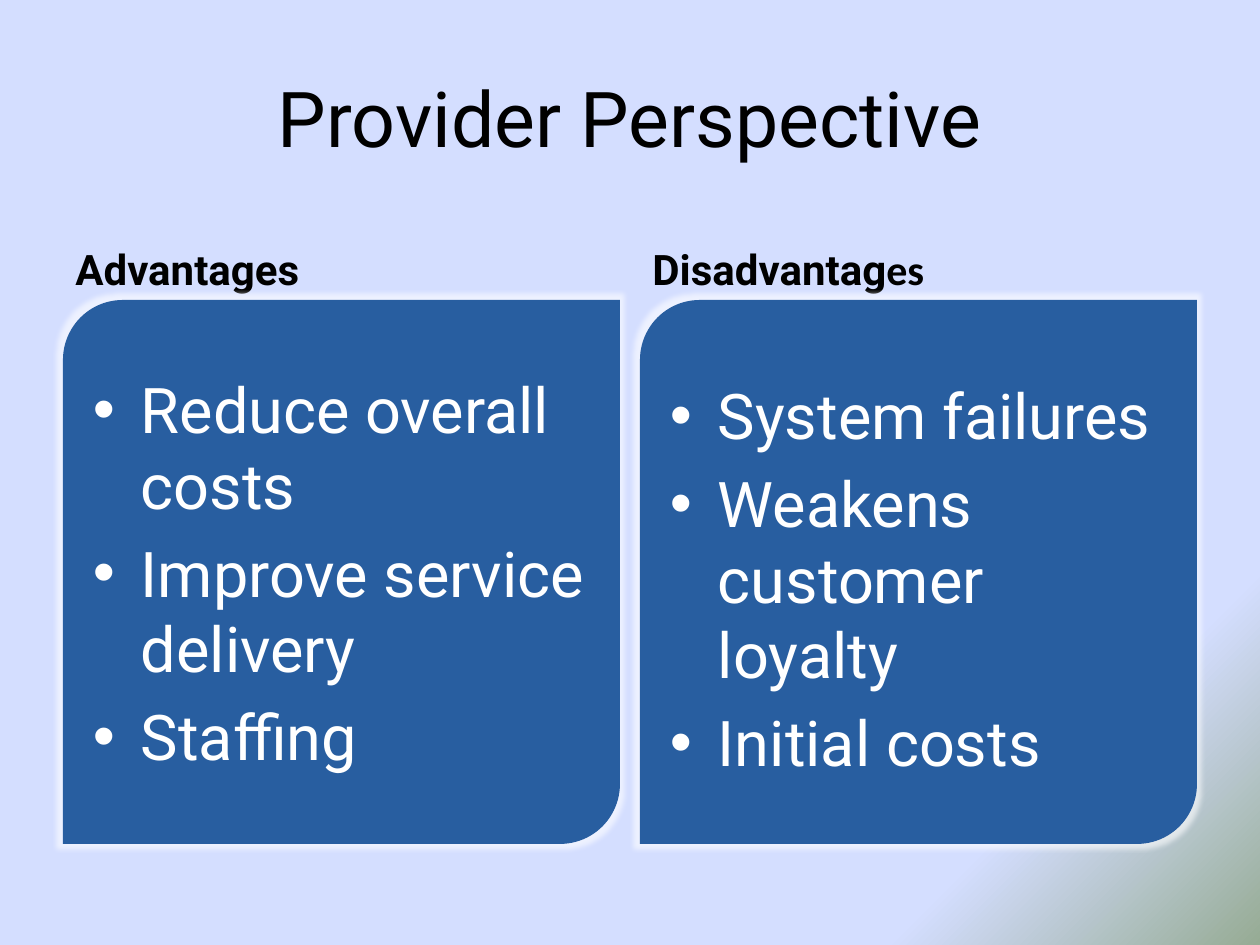
from dataclasses import dataclass

from pptx import Presentation
from pptx import util as u
from pptx.dml.color import RGBColor
from pptx.enum import shapes, text
from pptx.oxml import parse_xml
from pptx.oxml.ns import nsdecls, qn

PX = 914400 / 126
FONT = "Roboto"
BLACK, WHITE, PANEL_BLUE = "000000", "FFFFFF", "285EA0"
SKY, SAGE = "D4DEFF", "96AB94"

COLUMN_WIDTH = 557
HEADING_TOP, HEADING_HEIGHT = 212, 88
PANEL_TOP, PANEL_HEIGHT = 300, 544
BULLET_INDENT = 48


@dataclass
class Column:
    left: int
    heading: list[tuple[str, str]]
    points: list[str]
    top_inset: int


COLUMNS = [
    Column(63, [("Advantages", FONT)],
           ["Reduce overall costs", "Improve service delivery", "Staffing"], 6),
    Column(640, [("Disadvantag", FONT), ("es", "Calibri")],
           ["System failures", "Weakens customer loyalty", "Initial costs"], 18),
]


def px(length: float) -> u.Emu:
    return u.Emu(round(length * PX))


def color(value: str) -> RGBColor:
    return RGBColor.from_string(value)


def box(left: int, top: int, width: int, height: int) -> list[u.Emu]:
    return [px(length) for length in (left, top, width, height)]


def add_run(paragraph, content: str, *, size: float, fill: str,
            font: str = FONT, bold: bool = False) -> None:
    run = paragraph.add_run()
    run.text = content
    run.font.name = font
    run.font.size = u.Pt(size)
    run.font.bold = bold
    run.font.color.rgb = color(fill)


def prepare_frame(shape, anchor: text.MSO_ANCHOR):
    frame = shape.text_frame
    frame.word_wrap = True
    frame.auto_size = text.MSO_AUTO_SIZE.NONE
    frame.vertical_anchor = anchor
    return frame


def set_background(slide) -> None:
    """Radial gradient centred on the top-left corner, turning green at the far end."""
    slide.background.fill.gradient()
    gradient = slide.element.find(".//" + qn("a:gradFill"))
    stops = "".join(
        f'<a:gs pos="{position}000"><a:srgbClr val="{value}"/></a:gs>'
        for position, value in ((0, SKY), (83, SKY), (100, SAGE)))
    gradient.getparent().replace(gradient, parse_xml(
        f'<a:gradFill {nsdecls("a")} rotWithShape="1"><a:gsLst>{stops}</a:gsLst>'
        '<a:path path="circle"><a:fillToRect r="100000" b="100000"/></a:path>'
        '</a:gradFill>'))


def add_glow(shape) -> None:
    shape.shadow.inherit = False
    effects = shape.element.spPr.find(qn("a:effectLst"))
    effects.append(parse_xml(
        f'<a:glow {nsdecls("a")} rad="{px(9)}"><a:srgbClr val="{WHITE}">'
        '<a:alpha val="60000"/></a:srgbClr></a:glow>'))


def add_bullet(paragraph) -> None:
    properties = paragraph._p.get_or_add_pPr()
    properties.set("marL", str(px(BULLET_INDENT)))
    properties.set("indent", str(-px(BULLET_INDENT)))
    properties.append(parse_xml(f'<a:buFont {nsdecls("a")} typeface="Arial"/>'))
    properties.append(parse_xml(f'<a:buChar {nsdecls("a")} char="•"/>'))


def set_title(slide, content: str) -> None:
    title = slide.shapes.title
    title.left, title.top, title.width, title.height = box(63, 38, 1134, 158)
    paragraph = prepare_frame(title, text.MSO_ANCHOR.MIDDLE).paragraphs[0]
    paragraph.alignment = text.PP_ALIGN.CENTER
    add_run(paragraph, content, size=44, fill=BLACK)


def add_heading(slide, column: Column) -> None:
    heading = slide.shapes.add_textbox(
        *box(column.left, HEADING_TOP, COLUMN_WIDTH, HEADING_HEIGHT))
    paragraph = prepare_frame(heading, text.MSO_ANCHOR.BOTTOM).paragraphs[0]
    for content, font in column.heading:
        add_run(paragraph, content, size=24, fill=BLACK, font=font, bold=True)


def add_panel(slide, column: Column) -> None:
    panel = slide.shapes.add_shape(
        shapes.MSO_SHAPE.ROUND_2_DIAG_RECTANGLE,
        *box(column.left, PANEL_TOP, COLUMN_WIDTH, PANEL_HEIGHT))
    panel.adjustments[0] = 0.11
    panel.adjustments[1] = 0
    panel.fill.solid()
    panel.fill.fore_color.rgb = color(PANEL_BLUE)
    panel.line.fill.background()
    add_glow(panel)

    frame = prepare_frame(panel, text.MSO_ANCHOR.MIDDLE)
    frame.margin_top = px(column.top_inset)
    for index, point in enumerate(column.points):
        paragraph = frame.add_paragraph() if index else frame.paragraphs[0]
        paragraph.alignment = text.PP_ALIGN.LEFT
        paragraph.space_before = u.Pt(7)
        add_bullet(paragraph)
        add_run(paragraph, point, size=36, fill=WHITE)


def main() -> None:
    presentation = Presentation()
    presentation.slide_width, presentation.slide_height = px(1260), px(945)
    slide = presentation.slides.add_slide(presentation.slide_layouts.get_by_name("Title Only"))
    set_background(slide)
    set_title(slide, "Provider Perspective")
    for column in COLUMNS:
        add_heading(slide, column)
        add_panel(slide, column)
    presentation.save("out.pptx")


if __name__ == "__main__":
    main()
